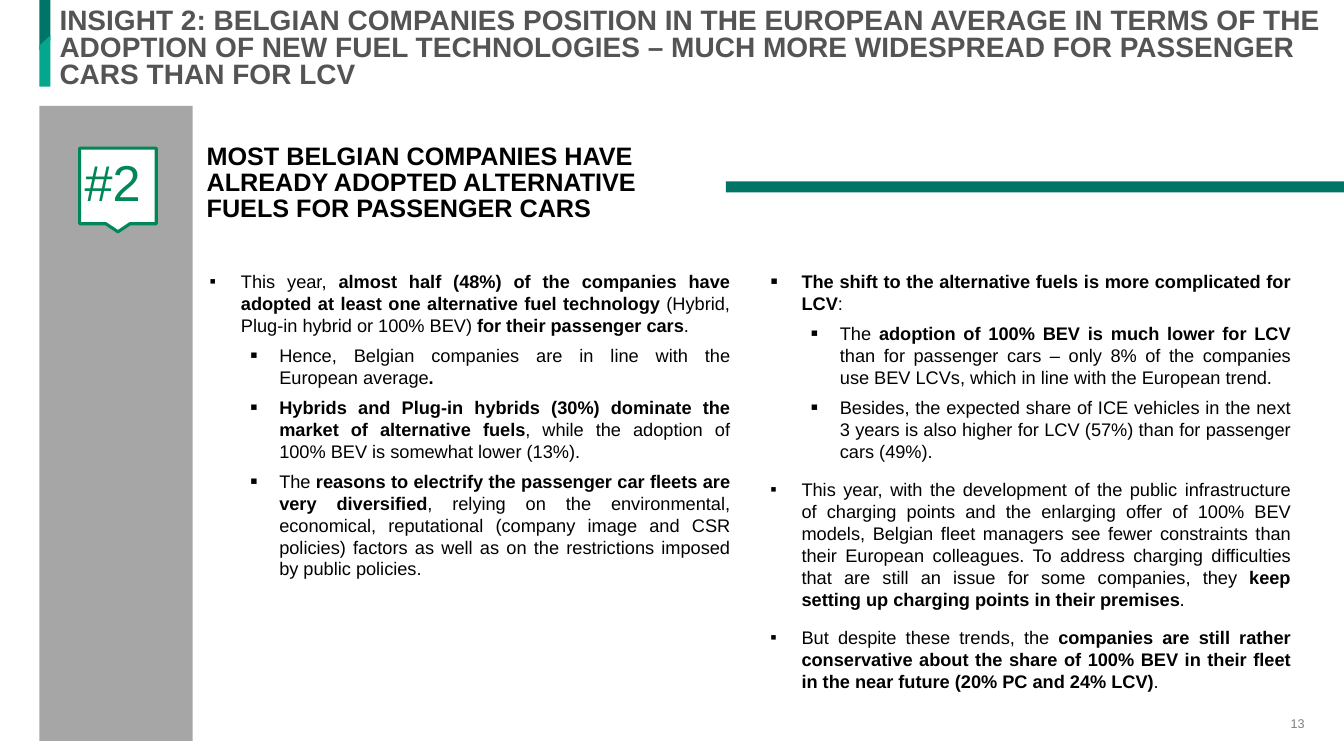
from pptx import Presentation
from pptx.dml.color import RGBColor
from pptx.enum.shapes import MSO_SHAPE
from pptx.enum.text import MSO_ANCHOR, MSO_AUTO_SIZE, PP_ALIGN
from pptx.oxml.ns import qn
from pptx.util import Inches, Pt
from lxml import etree

FONT = "Arial"
COLORS = {
    "black": "000000",
    "white": "FFFFFF",
    "title": "545454",
    "number": "808080",
    "sidebar": "A6A6A6",
    "teal": "007466",
    "mint": "05A68E",
    "badge": "008756",
}

# Bullet styles: level, left margin, hanging indent, space before, bullet size in percent
STYLES = {
    "point": (0, 0.31, 0.31, 12, 100),
    "heading": (0, 0.31, 0.31, 12, 120),
    "detail": (1, 0.69, 0.29, 6, 120),
}

# Each item: style, then (text, bold) runs
PASSENGER_CARS = [
    ("point", [
        ("This year, ", False),
        ("almost half (48%) of the companies have adopted at least one "
         "alternative fuel technology ", True),
        ("(Hybrid, Plug-in hybrid or 100% BEV) ", False),
        ("for their passenger cars", True),
        (".", False)]),
    ("detail", [
        ("Hence, Belgian companies are in line with the European average", False),
        (".", True)]),
    ("detail", [
        ("Hybrids and Plug-in hybrids (30%) dominate the market of "
         "alternative fuels", True),
        (", while the adoption of 100% BEV is somewhat lower (13%).", False)]),
    ("detail", [
        ("The ", False),
        ("reasons to electrify the passenger car fleets are very diversified", True),
        (", relying on the environmental, economical, reputational (company "
         "image and CSR policies) factors as well as on the restrictions "
         "imposed by public policies.", False)]),
]
COMMERCIAL_VEHICLES = [
    ("heading", [
        ("The shift to the alternative fuels is more complicated for LCV", True),
        (":", False)]),
    ("detail", [
        ("The ", False),
        ("adoption of 100% BEV is much lower for LCV ", True),
        ("than for passenger cars – only 8% of the companies use BEV LCVs, "
         "which in line with the European trend.", False)]),
    ("detail", [
        ("Besides, the expected share of ICE vehicles in the next 3 years is "
         "also higher for LCV (57%) than for passenger cars (49%).", False)]),
    ("point", [
        ("This year, with the development of the public infrastructure of "
         "charging points and the enlarging offer of 100% BEV models, Belgian "
         "fleet managers see fewer constraints than their European colleagues. "
         "To address charging difficulties that are still an issue for some "
         "companies, they ", False),
        ("keep setting up charging points in their premises", True),
        (".", False)]),
    ("point", [
        ("But despite these trends, the ", False),
        ("companies are still rather conservative about the share of 100% BEV "
         "in their fleet in the near future (20% PC and 24% LCV)", True),
        (".", False)]),
]


def color(name):
    return RGBColor.from_string(COLORS[name])


def place(shape, left, top, width, height):
    shape.left, shape.top = Inches(left), Inches(top)
    shape.width, shape.height = Inches(width), Inches(height)


def set_frame(shape, left_margin=0, wrap=True, anchor=MSO_ANCHOR.TOP):
    frame = shape.text_frame
    frame.auto_size = MSO_AUTO_SIZE.NONE
    frame.word_wrap = wrap
    frame.vertical_anchor = anchor
    frame.margin_left = Inches(left_margin)
    frame.margin_top = frame.margin_right = frame.margin_bottom = 0
    return frame


def add_run(paragraph, text, size, color_name, bold=False):
    run = paragraph.add_run()
    run.text = text
    run.font.name = FONT
    run.font.size = Pt(size)
    run.font.bold = bold
    run.font.color.rgb = color(color_name)


def fill_line(frame, text, size, color_name, bold=False, spacing=1.0,
              align=PP_ALIGN.LEFT):
    paragraph = frame.paragraphs[0]
    paragraph.alignment = align
    paragraph.line_spacing = spacing
    paragraph.space_before = Pt(0)
    add_run(paragraph, text, size, color_name, bold)


def add_label(slide, box, text, size, color_name, wrap=False,
              anchor=MSO_ANCHOR.TOP, **line_format):
    label = slide.shapes.add_textbox(*map(Inches, box))
    frame = set_frame(label, wrap=wrap, anchor=anchor)
    fill_line(frame, text, size, color_name, **line_format)


def add_block(slide, preset, box, color_name, rotation=0):
    block = slide.shapes.add_shape(preset, *map(Inches, box))
    block.shadow.inherit = False
    block.fill.solid()
    block.fill.fore_color.rgb = color(color_name)
    block.line.fill.background()
    block.rotation = rotation


def add_badge(slide):
    builder = slide.shapes.build_freeform(Inches(1.55), Inches(1.47), scale=1.0)
    corners = [(0.79, 1.47), (0.79, 2.22), (1.05, 2.22), (1.17, 2.3),
               (1.29, 2.22), (1.55, 2.22)]
    builder.add_line_segments([(Inches(x), Inches(y)) for x, y in corners], close=True)
    badge = builder.convert_to_shape()
    badge.shadow.inherit = False
    badge.fill.solid()
    badge.fill.fore_color.rgb = color("white")
    badge.line.color.rgb = color("badge")
    badge.line.width = Pt(2.25)
    add_label(slide, (0.84, 1.59, 0.66, 0.6), "#2", 36, "badge", spacing=0.85)


def format_bullet(paragraph, margin, hanging, percent):
    properties = paragraph._p.get_or_add_pPr()
    properties.set("marL", str(Inches(margin)))
    properties.set("indent", str(-Inches(hanging)))
    etree.SubElement(properties, qn("a:buSzPct"), val=str(percent * 1000))
    etree.SubElement(properties, qn("a:buFont"), typeface=FONT)
    etree.SubElement(properties, qn("a:buChar"), char="▪")


def fill_list(placeholder, items):
    frame = set_frame(placeholder)
    for index, (style, runs) in enumerate(items):
        paragraph = frame.add_paragraph() if index else frame.paragraphs[0]
        level, margin, hanging, before, percent = STYLES[style]
        format_bullet(paragraph, margin, hanging, percent)
        paragraph.level = level
        paragraph.alignment = PP_ALIGN.JUSTIFY
        paragraph.space_before = Pt(before if index else 0)
        for text, bold in runs:
            add_run(paragraph, text, 13, "black", bold)


def main():
    presentation = Presentation()
    presentation.slide_width = Inches(13.33)
    presentation.slide_height = Inches(7.5)
    slide = presentation.slides.add_slide(presentation.slide_layouts[3])

    # Sidebar, title accent and divider
    add_block(slide, MSO_SHAPE.RECTANGLE, (0.39, 1.05, 1.52, 6.3), "sidebar")
    accent = MSO_SHAPE.FLOWCHART_MANUAL_INPUT
    add_block(slide, accent, (0.39, -0.01, 0.11, 0.51), "teal", rotation=180)
    add_block(slide, accent, (0.39, 0.35, 0.11, 0.51), "mint")
    add_block(slide, MSO_SHAPE.RECTANGLE, (7.2, 1.8, 6.13, 0.11), "teal")

    # Title
    title, left_list, right_list = slide.placeholders
    place(title, 0.39, 0.09, 12.94, 0.81)
    fill_line(set_frame(title, left_margin=0.2),
              "INSIGHT 2: BELGIAN COMPANIES POSITION IN THE EUROPEAN AVERAGE IN "
              "TERMS OF THE ADOPTION OF NEW FUEL TECHNOLOGIES – MUCH MORE "
              "WIDESPREAD FOR PASSENGER CARS THAN FOR LCV",
              20, "title", bold=True, spacing=0.8)

    # Numbered heading
    add_badge(slide)
    add_label(slide, (2.05, 1.44, 4.76, 0.77),
              "MOST BELGIAN COMPANIES HAVE ALREADY ADOPTED ALTERNATIVE FUELS "
              "FOR PASSENGER CARS",
              18, "black", wrap=True, bold=True, spacing=0.85)

    # Two columns of findings
    left, column_width, gap = 2.08, 5.16, 0.4
    columns = [(left_list, PASSENGER_CARS), (right_list, COMMERCIAL_VEHICLES)]
    for index, (placeholder, items) in enumerate(columns):
        place(placeholder, left + index * (column_width + gap), 2.68,
              column_width, 4.78)
        fill_list(placeholder, items)

    # Page number
    add_label(slide, (12.71, 7.1, 0.23, 0.15), "13", 9, "number",
              anchor=MSO_ANCHOR.MIDDLE, align=PP_ALIGN.RIGHT)

    presentation.save("out.pptx")


if __name__ == "__main__":
    main()
